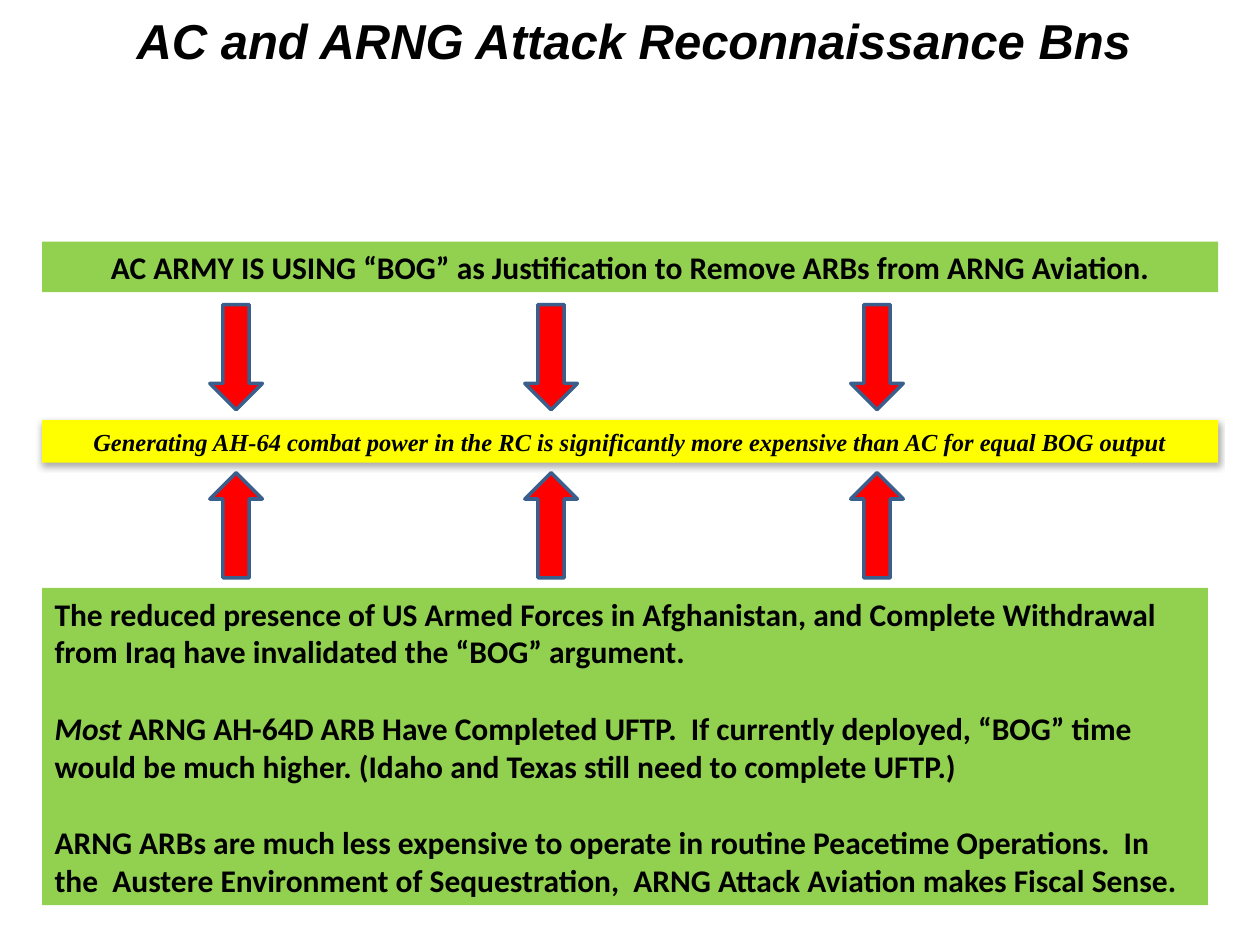
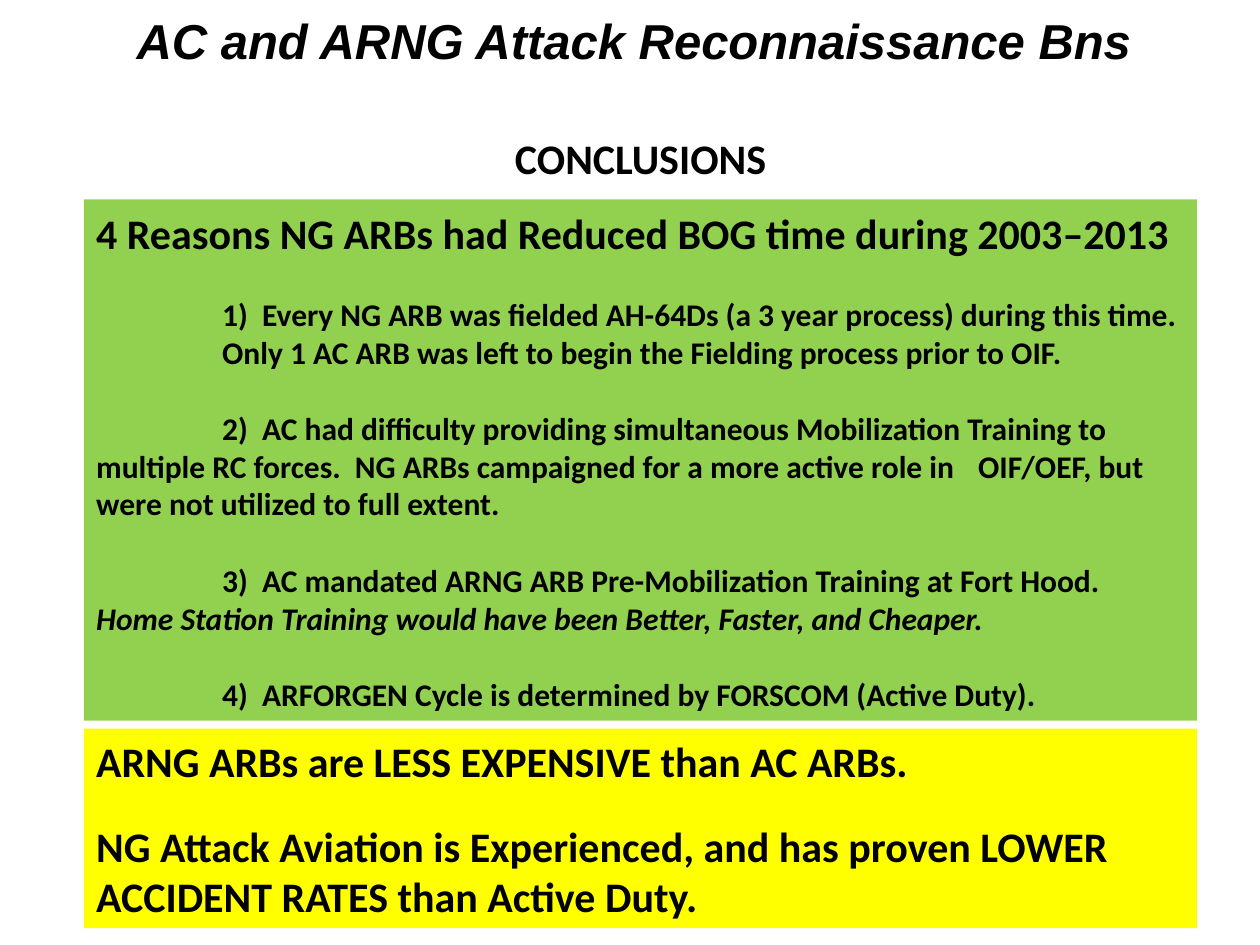
from lxml.etree import SubElement
from pptx import Presentation
from pptx.dml.color import RGBColor
from pptx.enum.shapes import MSO_SHAPE
from pptx.enum.text import MSO_ANCHOR, PP_ALIGN
from pptx.oxml.ns import qn
from pptx.util import Cm, Pt

BLACK, GREEN, YELLOW = "000000", "92D050", "FFFF00"
RED, BLUE = "FF0000", "3A5F8C"
TITLE = "AC and ARNG Attack Reconnaissance Bns"
INDENT = 2.54


def color(value):
    """Turn a hex string into a colour."""
    return RGBColor.from_string(value)


class Board:
    """Holds the shared style and the current slide."""

    def __init__(self):
        """Start an empty 4:3 deck."""
        self.deck = Presentation()
        self.deck.slide_width, self.deck.slide_height = Cm(25.4), Cm(19.05)
        self.page = None

    def new_page(self):
        """Add a blank slide with the shared title."""
        self.page = self.deck.slides.add_slide(self.deck.slide_layouts[6])
        box = self.label(1.27, 0.08, 23.01, 1.45)
        self.add_text(box, TITLE, size=28, font="Arial", italic=True, center=True)

    def label(self, left, top, width, height):
        """Add a wrapping text box."""
        box = self.page.shapes.add_textbox(Cm(left), Cm(top), Cm(width), Cm(height))
        box.text_frame.word_wrap = True
        return box

    def shape(self, kind, left, top, width, height, fill):
        """Add a flat preset shape without an outline."""
        shape = self.page.shapes.add_shape(kind, Cm(left), Cm(top), Cm(width), Cm(height))
        shape.shadow.inherit = False
        shape.fill.solid()
        shape.fill.fore_color.rgb = color(fill)
        shape.line.fill.background()
        return shape

    def panel(self, left, top, width, height, fill):
        """Add a filled rectangle for text."""
        panel = self.shape(MSO_SHAPE.RECTANGLE, left, top, width, height, fill)
        panel.text_frame.word_wrap = True
        panel.text_frame.vertical_anchor = MSO_ANCHOR.MIDDLE
        return panel

    def arrow(self, kind, left, top):
        """Add a red block arrow with a blue outline."""
        arrow = self.shape(kind, left, top, 1.06, 2.12, RED)
        arrow.line.color.rgb = color(BLUE)
        arrow.line.width = Pt(2)

    def drop_shadow(self, shape):
        """Give a shape a soft shadow below it."""
        effects = shape._element.spPr.find(qn("a:effectLst"))
        shadow = SubElement(effects, qn("a:outerShdw"), blurRad=str(Pt(3.5)),
                            dist=str(Pt(2.2)), dir="5400000", rotWithShape="0")
        tone = SubElement(shadow, qn("a:srgbClr"), val=BLACK)
        SubElement(tone, qn("a:alpha"), val="32000")

    def add_text(self, box, text, size=18, font="Calibri", italic=False,
                 center=False, gap=0):
        """Add a bold paragraph; asterisks toggle italics and a vertical tab breaks the line."""
        frame = box.text_frame
        first = not frame.paragraphs[0].runs
        para = frame.paragraphs[0] if first else frame.add_paragraph()
        para.alignment = PP_ALIGN.CENTER if center else PP_ALIGN.LEFT
        if gap:
            para.space_before = Pt(gap)
        for row, line in enumerate(text.split("\v")):
            if row:
                para.add_line_break()
            for order, part in enumerate(line.split("*")):
                if part:
                    span = para.add_run()
                    span.text = part
                    span.font.name, span.font.size = font, Pt(size)
                    span.font.bold = True
                    span.font.italic = italic or order % 2 == 1
                    span.font.color.rgb = color(BLACK)
        return para

    def indent(self, para, margin=0, first=0, tab=None):
        """Set the left margin, first-line indent and an optional tab stop."""
        properties = para._p.get_or_add_pPr()
        properties.set("marL", str(Cm(margin)))
        properties.set("indent", str(Cm(first)))
        if tab:
            stops = SubElement(properties, qn("a:tabLst"))
            SubElement(stops, qn("a:tab"), pos=str(Cm(tab)), algn="l")


def build_argument(board):
    """Build the slide that sets the two arguments against each other."""
    board.new_page()
    claim = board.panel(0.85, 4.87, 23.71, 1.02, GREEN)
    board.add_text(claim, "AC ARMY IS USING “BOG” as Justification to Remove ARBs "
                   "from ARNG Aviation.", center=True)
    cost = board.panel(0.85, 8.47, 23.71, 0.86, YELLOW)
    board.drop_shadow(cost)
    board.add_text(cost, "Generating AH-64 combat power in the RC is significantly more "
                   "expensive than AC for equal BOG output",
                   size=14, font="Times New Roman", italic=True, center=True)
    for left in (4.23, 10.58, 17.15):
        board.arrow(MSO_SHAPE.DOWN_ARROW, left, 6.14)
        board.arrow(MSO_SHAPE.UP_ARROW, left, 9.53)
    rebuttal = board.panel(0.85, 11.85, 23.5, 6.4, GREEN)
    points = (
        "The reduced presence of US Armed Forces in Afghanistan, and Complete "
        "Withdrawal from Iraq have invalidated the “BOG” argument.",
        "*Most* ARNG AH-64D ARB Have Completed UFTP.  If currently deployed, “BOG” "
        "time would be much higher. (Idaho and Texas still need to complete UFTP.)",
        "ARNG ARBs are much less expensive to operate in routine Peacetime "
        "Operations.  In the  Austere Environment of Sequestration,  ARNG Attack "
        "Aviation makes Fiscal Sense.",
    )
    for order, point in enumerate(points):
        board.add_text(rebuttal, point, gap=22 if order else 0)


def build_conclusions(board):
    """Build the slide with the reasons and conclusions."""
    board.new_page()
    heading = board.label(3.39, 2.54, 19.05, 1.27)
    board.add_text(heading, "CONCLUSIONS", size=24, center=True)

    reasons = board.panel(1.69, 4.02, 22.44, 10.51, GREEN)
    board.add_text(reasons, "4 Reasons NG ARBs had Reduced BOG time during 2003–2013", size=24)
    fielding = board.add_text(
        reasons, "1)  Every NG ARB was fielded AH-64Ds (a 3 year process) during this "
        "time. Only 1 AC ARB was left to begin the Fielding process prior to OIF.", gap=21)
    board.indent(fielding, margin=INDENT)
    others = (
        "2)  AC had difficulty providing simultaneous Mobilization Training to "
        "multiple RC forces.  NG ARBs campaigned for a more active role in\tOIF/OEF, "
        "but were not utilized to full extent.",
        "3)  AC mandated ARNG ARB Pre-Mobilization Training at Fort Hood.\v"
        "*Home Station Training would have been Better, Faster, and Cheaper.*",
        "4)  ARFORGEN Cycle is determined by FORSCOM (Active Duty).",
    )
    for reason in others:
        para = board.add_text(reasons, reason, gap=22)
        board.indent(para, first=INDENT, tab=7 * INDENT if "\t" in reason else None)

    summary = board.panel(1.69, 14.69, 22.44, 4.02, YELLOW)
    board.add_text(summary, "ARNG ARBs are LESS EXPENSIVE than AC ARBs.", size=24)
    board.add_text(summary, "NG Attack Aviation is Experienced, and has proven LOWER "
                   "ACCIDENT RATES than Active Duty.", size=24, gap=19.5)


def main():
    """Build and save the deck."""
    board = Board()
    build_argument(board)
    build_conclusions(board)
    board.deck.save("out.pptx")


if __name__ == "__main__":
    main()
